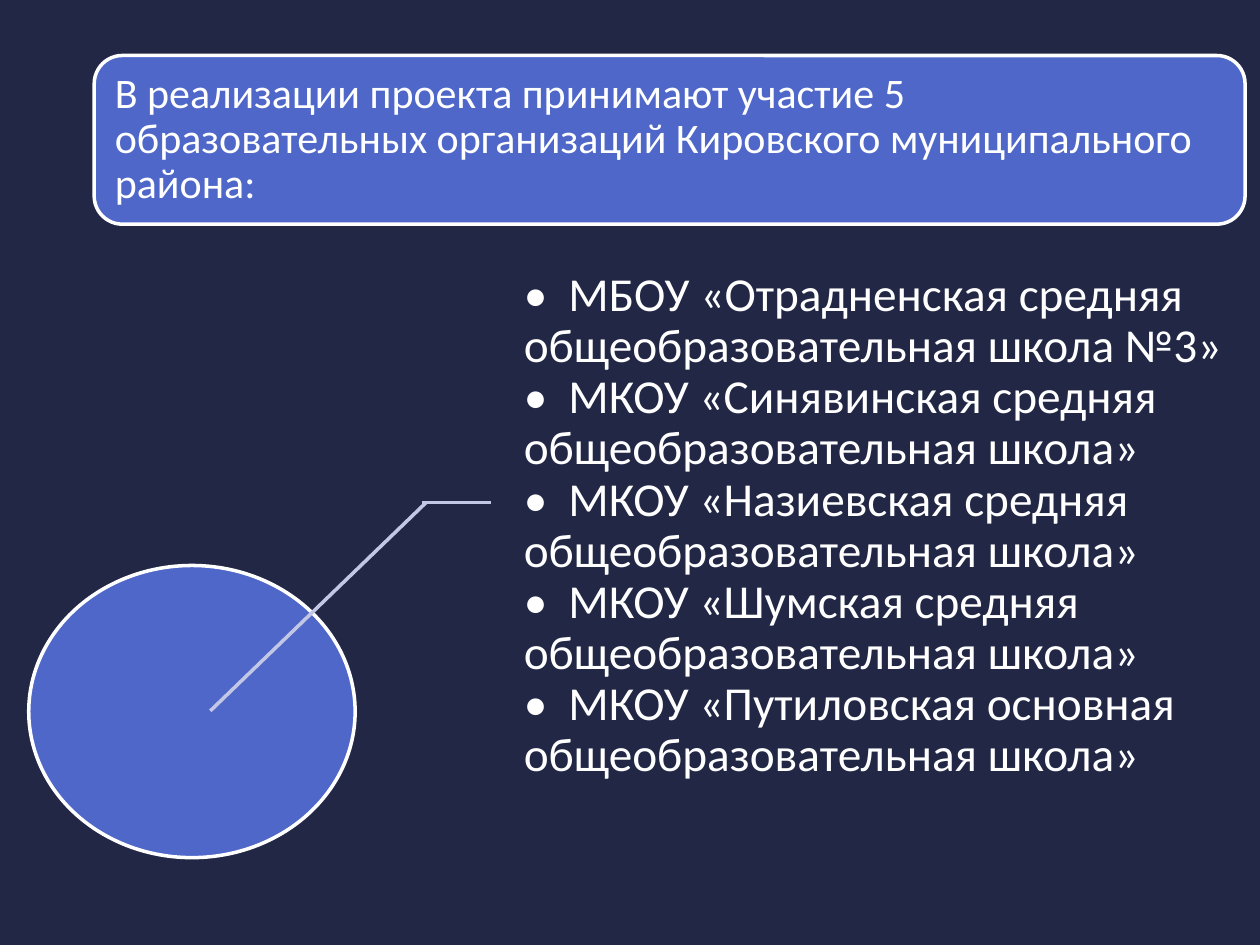
from lxml.etree import SubElement
from pptx import Presentation
from pptx.dml.color import RGBColor
from pptx.enum.shapes import MSO_CONNECTOR, MSO_SHAPE
from pptx.enum.text import MSO_ANCHOR, PP_ALIGN
from pptx.oxml.ns import qn
from pptx.util import Cm, Pt

# Content
HEADING = ("В реализации проекта принимают участие 5 образовательных "
           "организаций Кировского муниципального района:")
SCHOOLS = [
    "МБОУ «Отрадненская средняя общеобразовательная школа №3»",
    "МКОУ «Синявинская средняя общеобразовательная школа»",
    "МКОУ «Назиевская средняя общеобразовательная школа»",
    "МКОУ «Шумская средняя общеобразовательная школа»",
    "МКОУ «Путиловская основная общеобразовательная школа»",
]

# Style
FONT = "Calibri"
NAVY = RGBColor(0x21, 0x27, 0x45)
BLUE = RGBColor(0x4E, 0x67, 0xC8)
LAVENDER = RGBColor(0xC2, 0xC7, 0xE6)
WHITE = RGBColor(0xFF, 0xFF, 0xFF)
LINE_WIDTH = Pt(2)

# Places in cm: left, top, width, height
HEADING_BOX = (1.9, 1.12, 23.2, 3.4)
CIRCLE_BOX = (0.58, 11.4, 6.58, 5.89)
LIST_BOX = (10.03, 5.28, 15.37, 10.66)
# Leader from the list to the circle: x1, y1, x2, y2
LEADER_LINES = [(8.5, 10.13, 9.9, 10.13), (8.59, 10.13, 4.24, 14.33)]
BULLET_GAP = Cm(0.9)


def lengths(values):
    return [Cm(value) for value in values]


def add_blue_shape(slide, kind, box):
    shape = slide.shapes.add_shape(kind, *lengths(box))
    shape.shadow.inherit = False
    shape.fill.solid()
    shape.fill.fore_color.rgb = BLUE
    shape.line.color.rgb = WHITE
    shape.line.width = LINE_WIDTH
    return shape


def set_margins(frame, left, top, right, bottom):
    frame.margin_left, frame.margin_top = Cm(left), Cm(top)
    frame.margin_right, frame.margin_bottom = Cm(right), Cm(bottom)
    frame.word_wrap = True
    frame.vertical_anchor = MSO_ANCHOR.MIDDLE


def write_paragraph(paragraph, text, size):
    paragraph.text = text
    paragraph.alignment = PP_ALIGN.LEFT
    paragraph.line_spacing = 0.9
    paragraph.font.name = FONT
    paragraph.font.size = Pt(size)
    paragraph.font.color.rgb = WHITE


def add_tab_stop(paragraph, position):
    tabs = SubElement(paragraph._p.get_or_add_pPr(), qn("a:tabLst"))
    SubElement(tabs, qn("a:tab"), pos=str(int(position)), algn="l")


def main():
    presentation = Presentation()
    presentation.slide_width, presentation.slide_height = Cm(25.4), Cm(19.05)
    slide = presentation.slides.add_slide(presentation.slide_layouts[6])
    slide.background.fill.solid()
    slide.background.fill.fore_color.rgb = NAVY

    # Heading
    heading = add_blue_shape(slide, MSO_SHAPE.ROUNDED_RECTANGLE, HEADING_BOX)
    set_margins(heading.text_frame, 0.25, 0.25, 0.25, 0.25)
    write_paragraph(heading.text_frame.paragraphs[0], HEADING, 24)

    # Circle
    add_blue_shape(slide, MSO_SHAPE.OVAL, CIRCLE_BOX)

    # List of schools
    frame = slide.shapes.add_textbox(*lengths(LIST_BOX)).text_frame
    set_margins(frame, 0.53, 0.1, 0.1, 0.1)
    for index, school in enumerate(SCHOOLS):
        paragraph = frame.add_paragraph() if index else frame.paragraphs[0]
        add_tab_stop(paragraph, BULLET_GAP)
        write_paragraph(paragraph, f"•\t{school}", 27)

    # Leader lines
    for ends in LEADER_LINES:
        connector = slide.shapes.add_connector(
            MSO_CONNECTOR.STRAIGHT, *lengths(ends))
        connector.line.color.rgb = LAVENDER
        connector.line.width = LINE_WIDTH
        SubElement(connector._element.spPr, qn("a:effectLst"))

    presentation.save("out.pptx")


if __name__ == "__main__":
    main()
